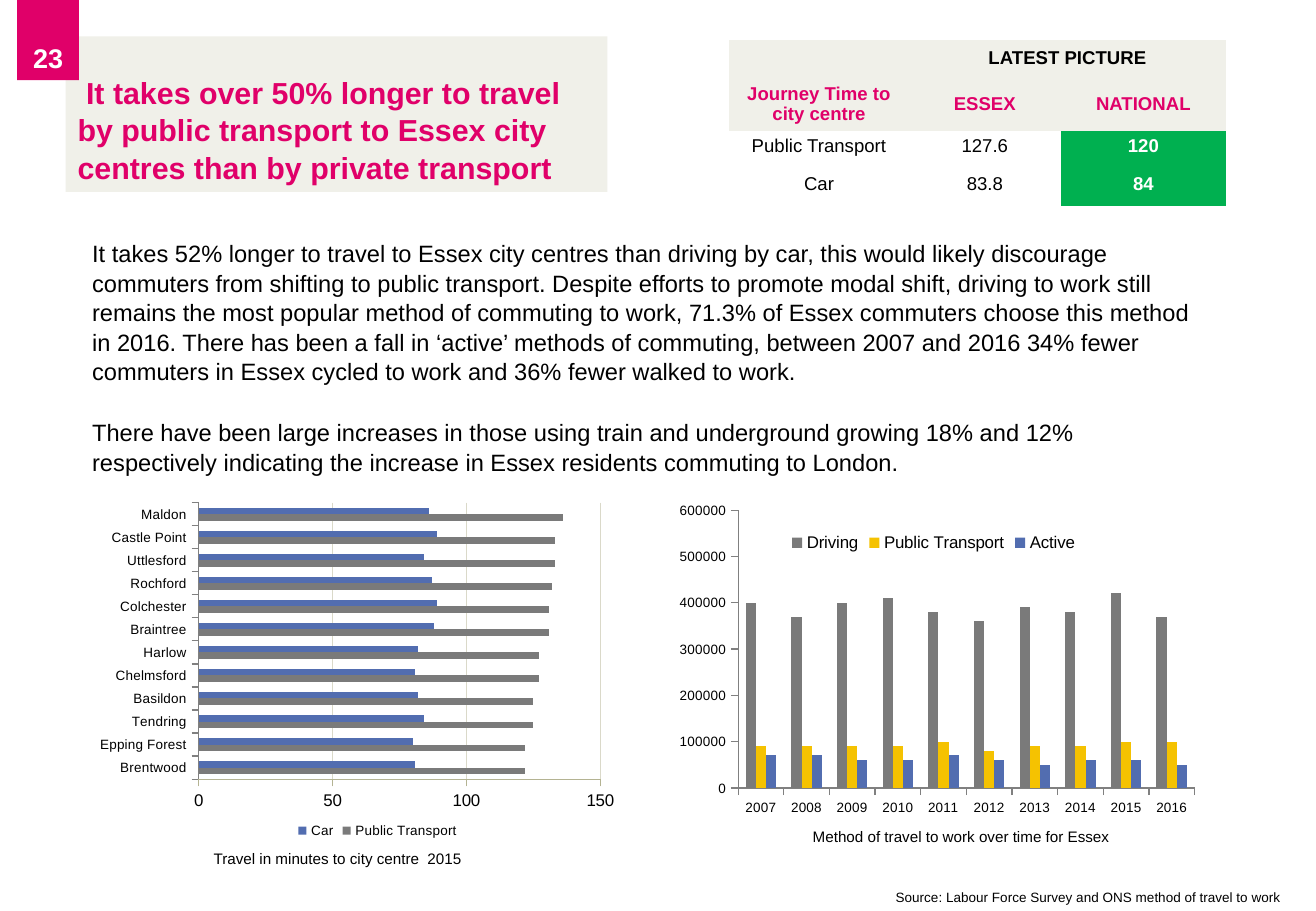
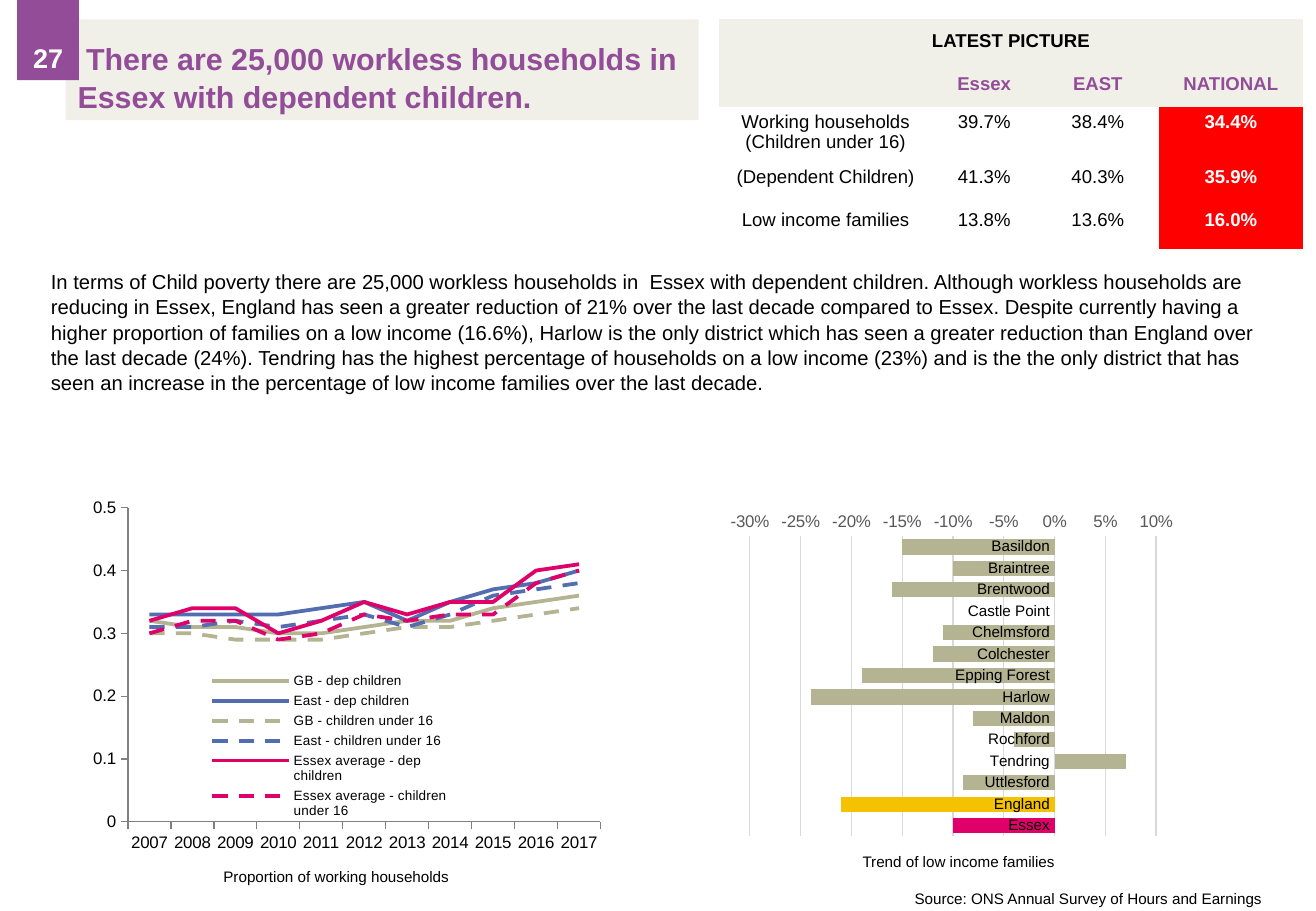
from dataclasses import dataclass

from lxml.etree import SubElement
from pptx import Presentation
from pptx.chart.data import CategoryChartData
from pptx.dml.color import RGBColor as Rgb
from pptx.enum.chart import XL_CHART_TYPE as Kind, XL_LEGEND_POSITION as LegendAt, XL_TICK_MARK as Tick
from pptx.enum.dml import MSO_LINE as Dash
from pptx.enum.shapes import MSO_SHAPE as Shape
from pptx.enum.text import MSO_ANCHOR as Anchor, PP_ALIGN as Align
from pptx.oxml.ns import qn
from pptx.util import Pt

PX = 9144  # 100 px to the inch
NO_GRID_STYLE = "{2D5ABB26-0587-4C30-8999-92F81FD0307C}"


@dataclass(frozen=True)
class Theme:
    font: str = "Arial"
    black: str = "000000"
    white: str = "FFFFFF"
    panel: str = "F0F0E9"
    pink: str = "E00069"
    purple: str = "934D98"
    green: str = "00B050"
    red: str = "FF0000"
    grey: str = "7A7A7A"
    axis: str = "808080"
    axis_text: str = "595959"
    blue: str = "526DB0"
    yellow: str = "F5C201"
    sand: str = "B4B392"
    sand_grid: str = "DAD9C9"
    grey_grid: str = "D9D9D9"
    title: int = 18
    badge: int = 16
    table: int = 11
    caption: int = 9
    chart: int = 10
    chart_small: int = 8


theme = Theme()


def write(frame, texts, size, color=theme.black, bold=False, align=Align.LEFT, anchor=Anchor.TOP,
          spacing=1, gap=0):
    """Fill a text frame, one paragraph per text, with gap points between paragraphs."""
    frame.word_wrap = True
    frame.vertical_anchor = anchor
    for i, text in enumerate(texts):
        para = frame.add_paragraph() if i else frame.paragraphs[0]
        para.text = text
        para.alignment = align
        para.line_spacing = float(spacing)
        para.space_before = Pt(gap if i else 0)
        para.font.name = theme.font
        para.font.size = Pt(size)
        para.font.bold = bold
        para.font.color.rgb = Rgb.from_string(color)


def set_layout(parent, index, area, inner=False):
    """Place a plot area or a legend by fractions of the chart: x, y and perhaps w, h."""
    for old in parent.findall(qn("c:layout")):
        parent.remove(old)
    layout = parent.makeelement(qn("c:layout"), {})
    parent.insert(index, layout)
    manual = SubElement(layout, qn("c:manualLayout"))
    settings = [("layoutTarget", "inner")] if inner else []
    settings += [("xMode", "edge"), ("yMode", "edge"), *zip("xywh", area)]
    for name, value in settings:
        SubElement(manual, qn(f"c:{name}"), val=str(value))


chart_defaults = dict(
    legend=None, legend_size=theme.chart_small, gap=150, tick=Tick.OUTSIDE, reverse=False, unit=1,
    category_size=theme.chart_small, category_line=theme.axis, format="General",
    value_size=theme.chart, value_color=theme.black, value_line=theme.axis, grid=None, highlights={},
)

pages = [
    dict(
        number="23", accent=theme.pink, title_box=(54, 30, 446, 128),
        title="It takes over 50% longer to travel by public transport to Essex city centres than by private transport",
        table_at=(600, 33), columns=[148, 125, 136], row=31, tall_row=1,
        banner_from=1, flag=theme.green,
        cells=[
            ["", "LATEST PICTURE", ""],
            ["Journey Time to city centre", "ESSEX", "NATIONAL"],
            ["Public Transport", "127.6", "120"],
            ["Car", "83.8", "84"],
        ],
        body_box=(66, 191, 935, 210), body_size=14,
        body=[
            "It takes 52% longer to travel to Essex city centres than driving by car, this would likely "
            "discourage commuters from shifting to public transport. Despite efforts to promote modal shift, "
            "driving to work still remains the most popular method of commuting to work, 71.3% of Essex "
            "commuters choose this method in 2016. There has been a fall in ‘active’ methods of commuting, "
            "between 2007 and 2016 34% fewer commuters in Essex cycled to work and 36% fewer walked to work.",
            "There have been large increases in those using train and underground growing 18% and 12% "
            "respectively indicating the increase in Essex residents commuting to London.",
        ],
        captions=[
            ("Travel in minutes to city centre  2015", 166, 694),
            ("Method of travel to work over time for Essex", 659, 676),
        ],
        source="Source: Labour Force Survey and ONS method of travel to work",
        source_right=1064, source_size=theme.chart_small,
        charts=[
            dict(
                kind=Kind.BAR_CLUSTERED, box=(58, 408, 459, 292), plot=(0.23, 0.02, 0.72, 0.78),
                legend=(0.4, 0.91), scale=(0, 150, 50), value_line=theme.sand, grid=theme.sand_grid,
                categories=["Brentwood", "Epping Forest", "Tendring", "Basildon", "Chelmsford", "Harlow",
                            "Braintree", "Colchester", "Rochford", "Uttlesford", "Castle Point", "Maldon"],
                series=[
                    ("Public Transport", theme.grey, "122 122 125 125 127 127 131 131 132 133 133 136"),
                    ("Car", theme.blue, "81 80 84 82 81 82 88 89 87 84 89 86"),
                ],
            ),
            dict(
                kind=Kind.COLUMN_CLUSTERED, box=(550, 408, 442, 301), plot=(0.13, 0.04, 0.85, 0.76),
                legend=(0.22, 0.09), legend_size=theme.chart, value_size=theme.chart_small,
                scale=(0, 600000, 100000), unit=10000,
                categories=[str(year) for year in range(2007, 2017)],
                series=[
                    ("Driving", theme.grey, "40 37 40 41 38 36 39 38 42 37"),
                    ("Public Transport", theme.yellow, "9 9 9 9 10 8 9 9 10 10"),
                    ("Active", theme.blue, "7 7 6 6 7 6 5 6 6 5"),
                ],
            ),
        ],
    ),
    dict(
        number="27", accent=theme.purple, title_box=(54, 16, 521, 83),
        title="There are 25,000 workless households in Essex with dependent children.",
        table_at=(592, 16), columns=[175, 86, 101, 118], row=36, tall_row=2,
        banner_from=0, flag=theme.red,
        cells=[
            ["LATEST PICTURE", "", "", ""],
            ["", "Essex", "EAST", "NATIONAL"],
            ["Working households (Children under 16)", "39.7%", "38.4%", "34.4%"],
            ["(Dependent Children)", "41.3%", "40.3%", "35.9%"],
            ["Low income families", "13.8%", "13.6%", "16.0%"],
        ],
        body_box=(32, 216, 1029, 155), body_size=12,
        body=[
            "In terms of Child poverty there are 25,000 workless households in  Essex with dependent children. "
            "Although workless households are reducing in Essex, England has seen a greater reduction of 21% over "
            "the last decade compared to Essex. Despite currently having a higher proportion of families on a low "
            "income (16.6%), Harlow is the only district which has seen a greater reduction than England over the "
            "last decade (24%). Tendring has the highest percentage of households on a low income (23%) and is "
            "the the only district that has seen an increase in the percentage of low income families over the "
            "last decade.",
        ],
        captions=[
            ("Proportion of working households", 174, 709),
            ("Trend of low income families", 700, 697),
        ],
        source="Source: ONS Annual Survey of Hours and Earnings",
        source_right=1048, source_size=theme.caption,
        charts=[
            dict(
                kind=Kind.LINE, box=(66, 400, 437, 302), plot=(0.09, 0.06, 0.89, 0.86),
                legend=(0.24, 0.5), category_size=theme.chart, scale=(0, 0.5, 0.1), unit=0.01,
                categories=[str(year) for year in range(2007, 2018)],
                series=[
                    ("GB - dep children", theme.sand, "32 31 31 30 30 31 32 32 34 35 36"),
                    ("East - dep children", theme.blue, "33 33 33 33 34 35 32 35 37 38 40"),
                    ("GB - children under 16", theme.sand, "30 30 29 29 29 30 31 31 32 33 34"),
                    ("East - children under 16", theme.blue, "31 31 32 31 32 33 31 33 36 37 38"),
                    ("Essex average - dep children", theme.pink, "32 34 34 30 32 35 33 35 35 40 41"),
                    ("Essex average - children under 16", theme.pink, "30 32 32 29 30 33 32 33 33 38 40"),
                ],
            ),
            dict(
                kind=Kind.BAR_CLUSTERED, box=(592, 392, 418, 309), plot=(0.06, 0.16, 0.8, 0.8),
                gap=40, tick=Tick.NONE, reverse=True, category_size=theme.caption,
                category_line=theme.grey_grid, scale=(-0.3, 0.1, 0.05), unit=0.01, format="0%",
                value_color=theme.axis_text, value_line=None, grid=theme.grey_grid,
                categories=["Basildon", "Braintree", "Brentwood", "Castle Point", "Chelmsford", "Colchester",
                            "Epping Forest", "Harlow", "Maldon", "Rochford", "Tendring", "Uttlesford",
                            "England", "Essex"],
                series=[("Series 1", theme.sand, "-15 -10 -16 0 -11 -12 -19 -24 -8 -4 7 -9 -21 -10")],
                highlights={"England": theme.yellow, "Essex": theme.pink},
            ),
        ],
    ),
]

deck = Presentation()
deck.slide_width, deck.slide_height = 1083 * PX, 750 * PX

for content in pages:
    page = deck.slides.add_slide(deck.slide_layouts[6])
    accent = content["accent"]

    # Title panel and number badge
    for box, fill, text, size, color, align in [
        (content["title_box"], theme.panel, content["title"], theme.title, accent, Align.LEFT),
        ((14, -1, 51, 67), accent, content["number"], theme.badge, theme.white, Align.CENTER),
    ]:
        panel = page.shapes.add_shape(Shape.RECTANGLE, *(n * PX for n in box))
        panel.shadow.inherit = False
        panel.fill.solid()
        panel.fill.fore_color.rgb = Rgb.from_string(fill)
        panel.line.fill.background()
        write(panel.text_frame, [text], size, color, True, align, Anchor.BOTTOM, spacing=1.04)
        if align == Align.LEFT:  # the first line clears the badge
            panel.text_frame.paragraphs[0]._p.get_or_add_pPr().set("indent", str(7 * PX))

    # Table of latest figures
    columns, cells = content["columns"], content["cells"]
    rows = [44 if r == content["tall_row"] else content["row"] for r in range(len(cells))]
    size = (*content["table_at"], sum(columns), sum(rows))
    table = page.shapes.add_table(len(rows), len(columns), *(n * PX for n in size)).table
    table._tbl.tblPr.find(qn("a:tableStyleId")).text = NO_GRID_STYLE
    for column, width in zip(table.columns, columns):
        column.width = width * PX
    for row, height in zip(table.rows, rows):
        row.height = height * PX
    last = len(columns) - 1
    for r, texts in enumerate(cells):
        for c, text in enumerate(texts):
            cell = table.cell(r, c)
            header, flagged = r < 2, r >= 2 and c == last
            color = accent if r == 1 else theme.white if flagged else theme.black
            write(cell.text_frame, [text], theme.table, color, header or flagged, Align.CENTER, spacing=0.95)
            cell.vertical_anchor = Anchor.MIDDLE if header else Anchor.TOP
            if header or flagged:
                cell.fill.solid()
                cell.fill.fore_color.rgb = Rgb.from_string(theme.panel if header else content["flag"])
            else:
                cell.fill.background()
    table.cell(0, content["banner_from"]).merge(table.cell(0, last))

    # Body text, captions and source
    body = page.shapes.add_textbox(*(n * PX for n in content["body_box"]))
    write(body.text_frame, content["body"], content["body_size"], spacing=1.04, gap=19)
    for text, x, y in content["captions"]:
        caption = page.shapes.add_textbox(x * PX, y * PX, 284 * PX, 25 * PX)
        write(caption.text_frame, [text], theme.caption)
    source_left = content["source_right"] - 355
    source = page.shapes.add_textbox(source_left * PX, 727 * PX, 355 * PX, 23 * PX)
    write(source.text_frame, [content["source"]], content["source_size"], align=Align.RIGHT)

    for settings in content["charts"]:
        spec = {**chart_defaults, **settings}
        is_line = spec["kind"] == Kind.LINE
        data = CategoryChartData()
        data.categories = spec["categories"]
        for name, _, values in spec["series"]:
            data.add_series(name, [round(int(value) * spec["unit"], 2) for value in values.split()])
        chart = page.shapes.add_chart(spec["kind"], *(n * PX for n in spec["box"]), data).chart
        chart.has_title = False
        chart.font.name = theme.font
        chart.font.color.rgb = Rgb.from_string(theme.black)
        plot = chart.plots[0]
        plot.vary_by_categories = False
        set_layout(chart._chartSpace.chart.plotArea, 0, spec["plot"], inner=True)

        chart.has_legend = spec["legend"] is not None
        if chart.has_legend:
            chart.legend.position = LegendAt.RIGHT if is_line else LegendAt.BOTTOM
            chart.legend.include_in_layout = False
            chart.legend.font.size = Pt(spec["legend_size"])
            set_layout(chart.legend._element, 1, spec["legend"])

        category, value = chart.category_axis, chart.value_axis
        for axis, line, size, color in [
            (category, spec["category_line"], spec["category_size"], theme.black),
            (value, spec["value_line"], spec["value_size"], spec["value_color"]),
        ]:
            axis.major_tick_mark, axis.minor_tick_mark = spec["tick"], Tick.NONE
            axis.tick_labels.font.size = Pt(size)
            axis.tick_labels.font.color.rgb = Rgb.from_string(color)
            if line:
                axis.format.line.color.rgb = Rgb.from_string(line)
            else:
                axis.format.line.fill.background()
        category.reverse_order = spec["reverse"]
        value.minimum_scale, value.maximum_scale, value.major_unit = spec["scale"]
        value.tick_labels.number_format = spec["format"]
        value.tick_labels.number_format_is_linked = False
        value.has_major_gridlines = spec["grid"] is not None
        if spec["grid"]:
            value.major_gridlines.format.line.color.rgb = Rgb.from_string(spec["grid"])

        for series, (name, color, _) in zip(plot.series, spec["series"]):
            if is_line:
                series.smooth = False
                series.format.line.width = Pt(2.25)
                series.format.line.color.rgb = Rgb.from_string(color)
                if "under 16" in name:
                    series.format.line.dash_style = Dash.DASH
                continue
            plot.gap_width = spec["gap"]
            series.invert_if_negative = False
            fills = [(series.format.fill, color)]
            for district, shade in spec["highlights"].items():
                fills.append((series.points[spec["categories"].index(district)].format.fill, shade))
            for fill, shade in fills:
                fill.solid()
                fill.fore_color.rgb = Rgb.from_string(shade)

deck.save("out.pptx")
